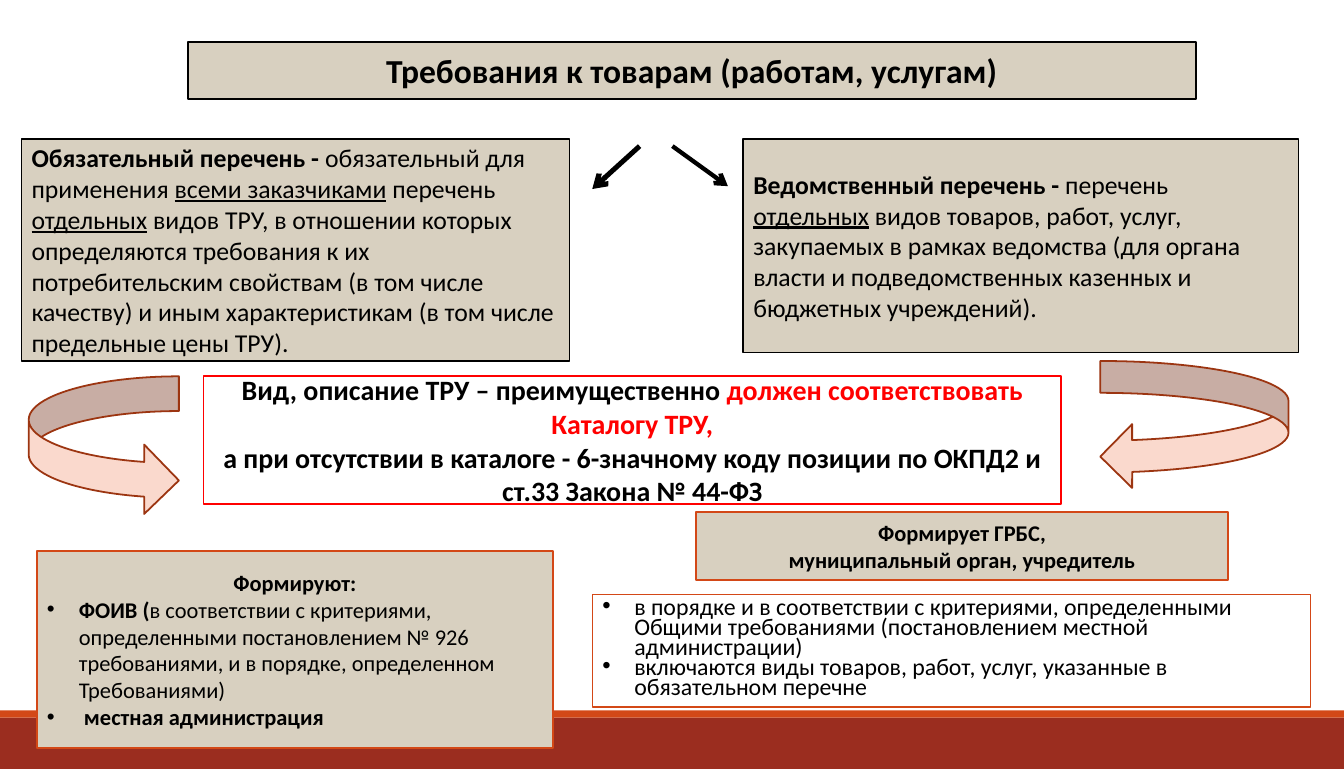
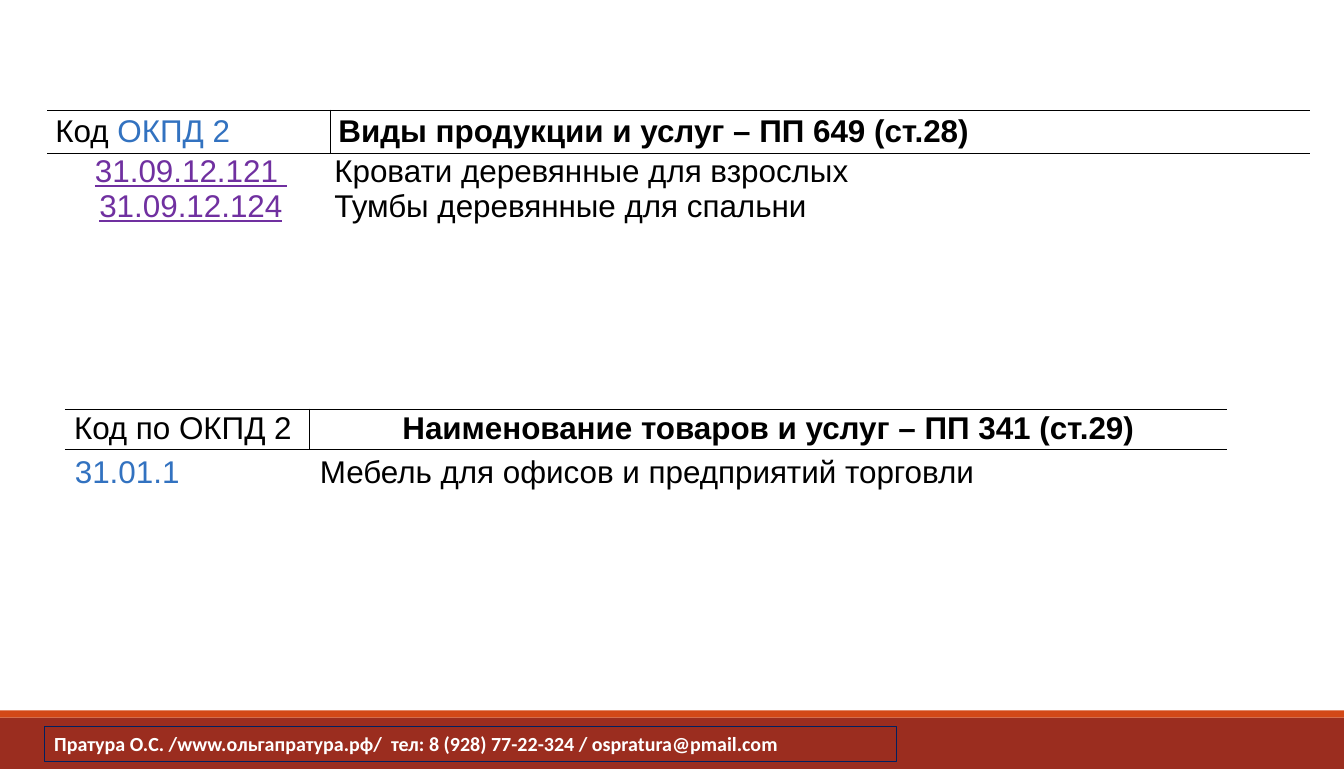
from pptx import Presentation
from pptx.dml.color import RGBColor
from pptx.enum.shapes import MSO_CONNECTOR, MSO_SHAPE as Preset
from pptx.enum.text import MSO_ANCHOR as Anchor, MSO_AUTO_SIZE, PP_ALIGN as Align
from pptx.oxml import parse_xml
from pptx.oxml.ns import nsdecls
from pptx.util import Cm, Pt

COLORS = {
    "black": "000000", "white": "FFFFFF", "sand": "D8D0C0", "brick": "9B2D1F",
    "orange": "D34817", "rust": "9C3511", "peach": "FAD9CD", "red": "FF0000",
    "blue": "3272C0", "purple": "7030A0", "navy": "002060",
}
NO_TABLE_STYLE = "{2D5ABB26-0587-4C30-8999-92F81FD0307C}"
BULLET_INDENT = Cm(0.79)

BOLD = {"bold": True}
UNDERLINED = {"underline": True}


def paint(shape, fill=None, line=None, width=1.25):
    """Set fill and outline; a missing colour means none."""
    if fill:
        shape.fill.solid()
        shape.fill.fore_color.rgb = RGBColor.from_string(COLORS[fill])
    else:
        shape.fill.background()
    if line:
        shape.line.color.rgb = RGBColor.from_string(COLORS[line])
        shape.line.width = Pt(width)
    else:
        shape.line.fill.background()


def write(frame, paragraphs, size, font="Calibri", color="black"):
    """Fill a frame from (paragraph format, [(text, run format), ...]) pairs."""
    frame.word_wrap = True
    for index, (layout, runs) in enumerate(paragraphs):
        paragraph = frame.add_paragraph() if index else frame.paragraphs[0]
        paragraph.alignment = layout.get("align", Align.LEFT)
        paragraph.line_spacing = layout.get("spacing")
        properties = paragraph._p.get_or_add_pPr()
        if "margin" in layout:
            properties.set("marL", str(layout["margin"]))
        if layout.get("bullet"):
            properties.set("marL", str(BULLET_INDENT))
            properties.set("indent", str(-BULLET_INDENT))
            properties.append(parse_xml(f'<a:buFont {nsdecls("a")} typeface="Arial"/>'))
            properties.append(parse_xml(f'<a:buChar {nsdecls("a")} char="•"/>'))
        for text, style in runs:
            run = paragraph.add_run()
            run.text = text
            look = {"name": font, "size": Pt(size), "bold": False, **style}
            run_color = look.pop("color", color)
            for attribute, value in look.items():
                setattr(run.font, attribute, value)
            run.font.color.rgb = RGBColor.from_string(COLORS[run_color])


prs = Presentation()
prs.slide_width, prs.slide_height = Cm(33.2), Cm(19)
requirements = prs.slides.add_slide(prs.slide_layouts[5])
codes = prs.slides.add_slide(prs.slide_layouts[6])

# Bands shared by all slides live on the master
for top, height, color in [(17.73, 1.27, "brick"), (17.55, 0.18, "orange")]:
    band = codes.shapes.add_shape(Preset.RECTANGLE, 0, Cm(top), prs.slide_width, Cm(height))
    band.shadow.inherit = False
    paint(band, color)
    prs.slide_master.shapes.element.append(band.element)

# Slide 1: requirements for goods, works and services
title = requirements.shapes.title
title.left, title.top, title.width, title.height = Cm(4.65), Cm(1.04), Cm(24.89), Cm(1.4)
paint(title, "sand", "black")
title.text_frame.auto_size = MSO_AUTO_SIZE.NONE
title.text_frame.vertical_anchor = Anchor.MIDDLE
write(title.text_frame,
      [({"align": Align.CENTER}, [("Требования к товарам (работам, услугам)", BOLD)])], 23.5)

CENTER = {"align": Align.CENTER}
BULLET = {"bullet": True}
TIGHT_BULLET = {"bullet": True, "spacing": 0.7}

mandatory_list = [({}, [
    ("Обязательный перечень - ", BOLD),
    ("обязательный для применения ", {}),
    ("всеми заказчиками", UNDERLINED),
    (" перечень ", {}),
    ("отдельных", UNDERLINED),
    (" видов ТРУ, в отношении которых определяются требования к их потребительским "
     "свойствам (в том числе качеству) и иным характеристикам (в том числе предельные "
     "цены ТРУ).", {}),
])]
department_list = [({}, [
    ("Ведомственный перечень - ", BOLD),
    ("перечень", {}),
    (" отдельных", UNDERLINED),
    (" видов товаров, работ, услуг, закупаемых в рамках ведомства (для органа власти и "
     "подведомственных казенных и бюджетных учреждений).", {}),
])]
catalogue_rule = [
    (CENTER, [("Вид, описание ТРУ – преимущественно ", BOLD),
              ("должен соответствовать Каталогу ТРУ,", {"bold": True, "color": "red"})]),
    (CENTER, [("а при отсутствии в каталоге - 6-значному коду позиции по ОКПД2 и "
               "ст.33 Закона № 44-ФЗ", BOLD)]),
]
mandatory_authors = [
    (CENTER, [("Формируют:", BOLD)]),
    (BULLET, [("ФОИВ (", BOLD),
              ("в соответствии с критериями, определенными постановлением № 926 "
               "требованиями, и в порядке, определенном Требованиями)", {})]),
    (BULLET, [(" местная администрация", BOLD)]),
]
department_authors = [
    (CENTER, [("Формирует ГРБС,", BOLD)]),
    (CENTER, [("муниципальный орган, учредитель", BOLD)]),
]
department_rules = [
    (TIGHT_BULLET, [("в порядке и в соответствии с критериями, определенными Общими "
                     "требованиями (постановлением местной администрации)", {})]),
    (TIGHT_BULLET, [("включаются виды товаров, работ, услуг, указанные в обязательном "
                     "перечне", {})]),
]
contacts = [({}, [("Пратура О.С. /www.ольгапратура.рф/  тел: 8 (928) 77-22-324 / "
                   "ospratura@pmail.com", BOLD)])]

# slide, left, top, width, height, fill, line, line width, anchor, text, size, text colour
boxes = [
    (requirements, 0.53, 3.43, 13.54, 5.49, "sand", "black", 1.25, Anchor.MIDDLE,
     mandatory_list, 18, "black"),
    (requirements, 18.36, 3.43, 13.72, 5.28, "sand", "black", 1.25, Anchor.MIDDLE,
     department_list, 18, "black"),
    (requirements, 5.03, 9.3, 21.18, 3.15, None, "red", 1.25, Anchor.MIDDLE,
     catalogue_rule, 19.6, "black"),
    (requirements, 0.91, 13.61, 12.75, 4.88, "sand", "orange", 1.25, Anchor.MIDDLE,
     mandatory_authors, 15.7, "black"),
    (requirements, 17.2, 12.65, 13.13, 1.68, "sand", "orange", 1.25, Anchor.MIDDLE,
     department_authors, 15.7, "black"),
    (requirements, 14.63, 14.68, 17.75, 2.79, None, "orange", 0.75, Anchor.TOP,
     department_rules, 16.7, "black"),
    (codes, 1.09, 17.96, 21.06, 0.86, None, "navy", 0.75, Anchor.TOP,
     contacts, 14, "white"),
]
for slide, left, top, width, height, fill, line, weight, anchor, text, size, color in boxes:
    box = slide.shapes.add_shape(Preset.RECTANGLE, Cm(left), Cm(top), Cm(width), Cm(height))
    box.shadow.inherit = False
    paint(box, fill, line, weight)
    box.text_frame.vertical_anchor = anchor
    write(box.text_frame, text, size, color=color)

for x1, y1, x2, y2, weight in [(15.8, 3.61, 14.63, 4.67, 3.5), (16.61, 3.61, 17.98, 4.6, 3)]:
    arrow = requirements.shapes.add_connector(MSO_CONNECTOR.STRAIGHT, Cm(x1), Cm(y1), Cm(x2), Cm(y2))
    arrow.line.color.rgb = RGBColor.from_string(COLORS["black"])
    arrow.line.width = Pt(weight)
    arrow.line._get_or_add_ln().append(parse_xml(f'<a:tailEnd {nsdecls("a")} type="arrow"/>'))
    arrow.element.spPr.append(parse_xml(f'<a:effectLst {nsdecls("a")}/>'))

for preset, left, top, width, height in [
    (Preset.CURVED_RIGHT_ARROW, 0.71, 9.3, 3.71, 3.43),
    (Preset.CURVED_LEFT_ARROW, 27.18, 8.92, 4.65, 3.15),
]:
    turn = requirements.shapes.add_shape(preset, Cm(left), Cm(top), Cm(width), Cm(height))
    turn.shadow.inherit = False
    paint(turn, "peach", "rust")

# Slide 2: code tables; each cell is (paragraph format, runs)
INDENT = {"margin": Cm(0.1)}
CODE = {"margin": Cm(0.1), "align": Align.CENTER}
LINKED = {"color": "purple", "underline": True}
HEADER_SIDES = ["RTB", "LTB"]

# left, top, column widths, row heights, (side, top) margins by row, rows
code_tables = [
    (1.17, 2.72, [6.99, 24.21], [1.08, 0.88, 0.88], [(0.2, 0.1), (0, 0), (0, 0)], [
        [({}, [("Код ", {}), ("ОКПД 2", {"color": "blue"})]),
         ({}, [("Виды продукции и услуг – ПП 649 (ст.28)", BOLD)])],
        [(CODE, [("31.09.12.121 ", LINKED)]), (INDENT, [("Кровати деревянные для взрослых", {})])],
        [(CODE, [("31.09.12.124", LINKED)]), (INDENT, [("Тумбы деревянные для спальни", {})])],
    ]),
    (1.6, 10.11, [6.05, 22.66], [1, 1.15], [(0.13, 0.05), (0.25, 0.13)], [
        [(CENTER, [("Код по ОКПД 2 ", {})]),
         (CENTER, [("Наименование товаров и услуг – ПП 341 (ст.29)", BOLD)])],
        [({}, [("31.01.1", {"color": "blue"})]),
         ({}, [("Мебель для офисов и предприятий торговли", {})])],
    ]),
]
for left, top, widths, heights, margins, rows in code_tables:
    table = codes.shapes.add_table(len(rows), len(widths), Cm(left), Cm(top),
                                   Cm(sum(widths)), Cm(sum(heights))).table
    table.first_row = table.horz_banding = False
    table._tbl.tblPr[0].text = NO_TABLE_STYLE
    for column, width in zip(table.columns, widths):
        column.width = Cm(width)
    for r, (row, height, (side, edge)) in enumerate(zip(rows, heights, margins)):
        table.rows[r].height = Cm(height)
        for c, content in enumerate(row):
            cell = table.cell(r, c)
            cell.margin_left = cell.margin_right = Cm(side)
            cell.margin_top = cell.margin_bottom = Cm(edge)
            for border in HEADER_SIDES[c] if r == 0 else "":
                cell._tc.get_or_add_tcPr().append(parse_xml(
                    f'<a:ln{border} {nsdecls("a")} w="{Pt(0.75)}"><a:solidFill>'
                    f'<a:srgbClr val="{COLORS["black"]}"/></a:solidFill></a:ln{border}>'))
            cell.fill.background()
            write(cell.text_frame, [content], 22, "Arial")

prs.save("out.pptx")
